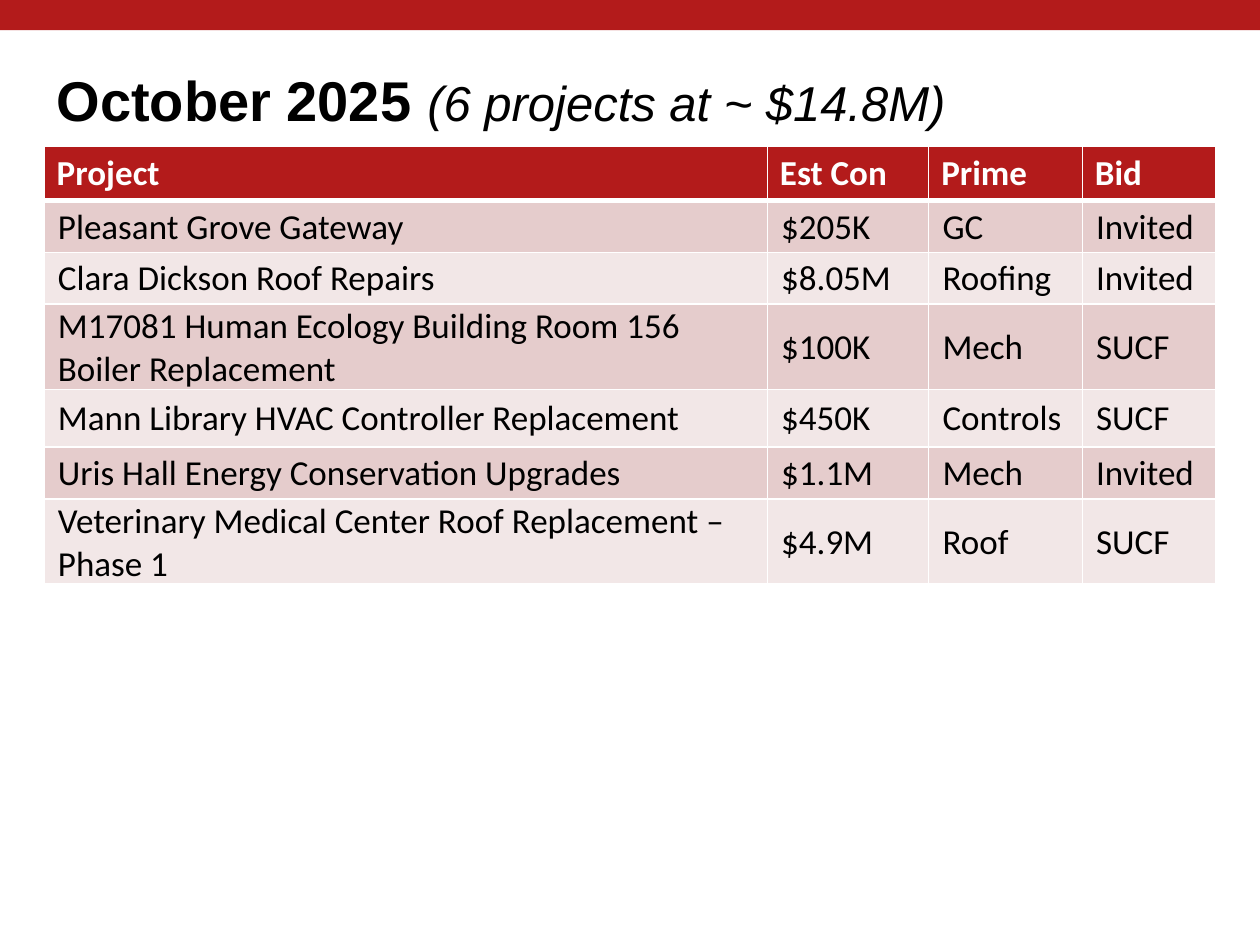
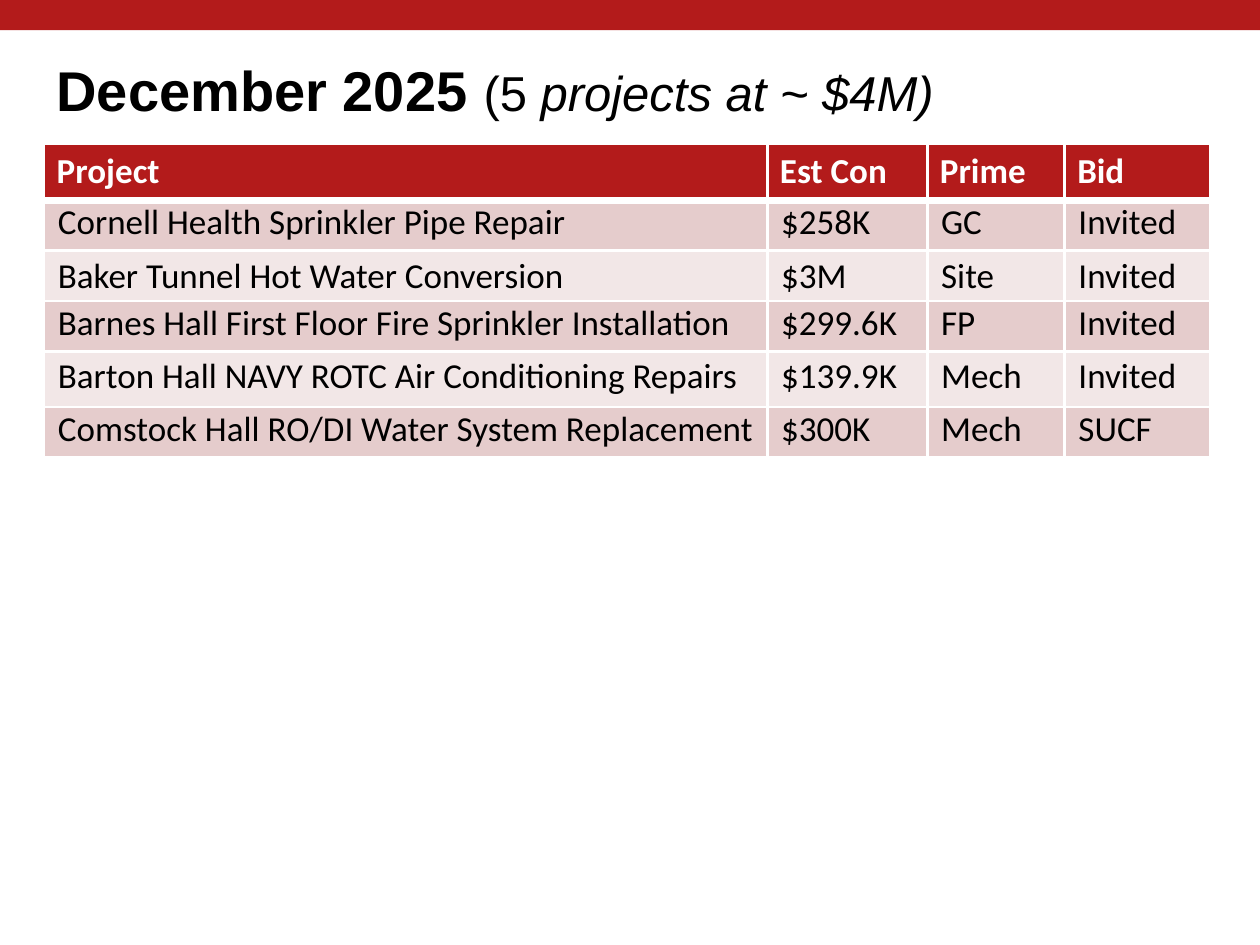
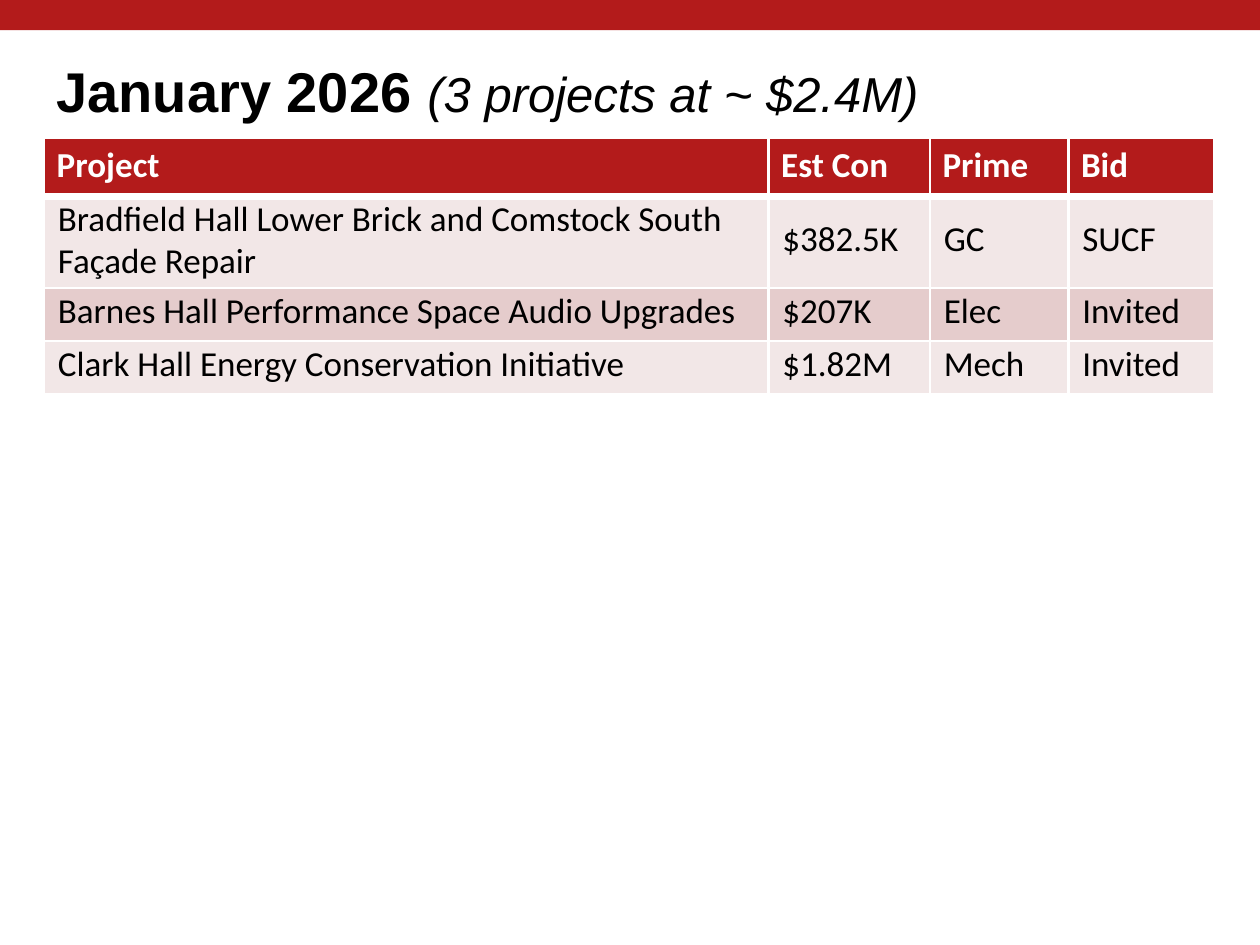
import lxml.etree
import pptx
import pptx.dml.color
import pptx.enum.shapes
import pptx.enum.text
import pptx.oxml.ns
import pptx.util

Pt = pptx.util.Pt
qn = pptx.oxml.ns.qn

COLORS = {
    "red": "B31B1B",
    "dark_stripe": "E5CCCC",
    "light_stripe": "F2E7E7",
    "white": "FFFFFF",
    "black": "000000",
}
STRIPES = ["dark_stripe", "light_stripe"]
HEADINGS = ["Project", "Est Con", "Prime", "Bid"]
PAGE_WIDTH, PAGE_HEIGHT = 720, 540
LEFT = 25.2
BAND_HEIGHT = 17.3
TITLE_HEIGHT = 54


def rgb(name):
    return pptx.dml.color.RGBColor.from_string(COLORS[name])


class BidDeck:
    """Holds the shared style and the page being drawn."""

    title_font = "Arial"
    table_font = "Calibri"

    def __init__(self):
        self.deck = pptx.Presentation()
        self.deck.slide_width = Pt(PAGE_WIDTH)
        self.deck.slide_height = Pt(PAGE_HEIGHT)
        self.page = None

    def add_page(self):
        self.page = self.deck.slides.add_slide(self.deck.slide_layouts[6])
        self.add_band()

    def add_band(self):
        band = self.page.shapes.add_shape(
            pptx.enum.shapes.MSO_SHAPE.RECTANGLE, 0, 0, Pt(PAGE_WIDTH), Pt(BAND_HEIGHT))
        band.shadow.inherit = False
        band.fill.solid()
        band.fill.fore_color.rgb = rgb("red")
        band.line.fill.background()

    def add_span(self, para, text, font, size, color, bold=False, italic=False):
        span = para.add_run()
        span.text = text
        span.font.name = font
        span.font.size = Pt(size)
        span.font.color.rgb = rgb(color)
        span.font.bold = bold
        span.font.italic = italic

    def add_title(self, top, month, summary):
        box = self.page.shapes.add_textbox(
            Pt(LEFT), Pt(top), Pt(PAGE_WIDTH - LEFT), Pt(TITLE_HEIGHT))
        frame = box.text_frame
        frame.word_wrap = True
        frame.vertical_anchor = pptx.enum.text.MSO_ANCHOR.MIDDLE
        para = frame.paragraphs[0]
        self.add_span(para, month + " ", self.title_font, 32, "black", bold=True)
        for text, italic in summary:
            self.add_span(para, text, self.title_font, 28, "black", italic=italic)

    def add_borders(self, cell, widths):
        properties = cell._tc.get_or_add_tcPr()
        for side, width in widths.items():
            line = lxml.etree.SubElement(properties, qn("a:ln" + side), w=str(Pt(width)))
            fill = lxml.etree.SubElement(line, qn("a:solidFill"))
            lxml.etree.SubElement(fill, qn("a:srgbClr"), val=COLORS["white"])

    def fill_cell(self, cell, text, fill, borders, header, bottom_inset):
        self.add_borders(cell, borders)
        cell.fill.solid()
        cell.fill.fore_color.rgb = rgb(fill)
        para = cell.text_frame.paragraphs[0]
        if not header:
            cell.vertical_anchor = pptx.enum.text.MSO_ANCHOR.MIDDLE
            cell.margin_left = cell.margin_top = cell.margin_right = Pt(0.72)
            cell.margin_bottom = Pt(bottom_inset)
            indent = para._p.get_or_add_pPr()
            indent.set("marL", str(Pt(7.2)))
            indent.set("indent", "0")
        self.add_span(para, text, self.table_font, 20,
                      "white" if header else "black", bold=header)

    def add_project_table(self, top, widths, header_height, projects, line, header_line,
                          first_stripe=0):
        """Each project is (row height, bottom inset, cell texts)."""
        rows = [(header_height, 0, HEADINGS)] + projects
        heights = [height for height, _, _ in rows]
        table = self.page.shapes.add_table(
            len(rows), len(widths), Pt(LEFT), Pt(top),
            Pt(sum(widths)), Pt(sum(heights))).table
        table.horz_banding = False
        for column, width in zip(table.columns, widths):
            column.width = Pt(width)
        for number, (height, inset, texts) in enumerate(rows):
            table.rows[number].height = Pt(height)
            header = number == 0
            fill = "red" if header else STRIPES[(number - 1 + first_stripe) % 2]
            borders = {"L": line, "R": line,
                       "T": header_line if number == 1 else line,
                       "B": header_line if header else line}
            for column, text in enumerate(texts):
                self.fill_cell(table.cell(number, column), text, fill, borders,
                               header, inset)


def main():
    bids = BidDeck()

    # October
    bids.add_page()
    bids.add_title(29.5, "October 2025", [("(6 projects at ~ $14.8M)", True)])
    bids.add_project_table(83.5, [413.3, 92.2, 87.8, 76.3], 29.5, [
        (29.5, 0, ["Pleasant Grove Gateway", "$205K", "GC", "Invited"]),
        (29.5, 0, ["Clara Dickson Roof Repairs", "$8.05M", "Roofing", "Invited"]),
        (29.5, 0, ["M17081 Human Ecology Building Room 156 Boiler Replacement",
                   "$100K", "Mech", "SUCF"]),
        (33.1, 0, ["Mann Library HVAC Controller Replacement",
                   "$450K", "Controls", "SUCF"]),
        (29.5, 0, ["Uris Hall Energy Conservation Upgrades", "$1.1M", "Mech", "Invited"]),
        (29.5, 0, ["Veterinary Medical Center Roof Replacement – Phase 1",
                   "$4.9M", "Roof", "SUCF"]),
    ], line=1, header_line=3)

    # December
    bids.add_page()
    bids.add_title(23.8, "December 2025", [("(5", False), (" projects at ~ $4M)", True)])
    bids.add_project_table(82.1, [413.3, 91.4, 78.5, 83.5], 32.4, [
        (28.8, 3.6, ["Cornell Health Sprinkler Pipe Repair", "$258K", "GC", "Invited"]),
        (28.8, 0, ["Baker Tunnel Hot Water Conversion", "$3M", "Site", "Invited"]),
        (28.8, 3.6, ["Barnes Hall First Floor Fire Sprinkler Installation",
                     "$299.6K", "FP", "Invited"]),
        (31.7, 3.6, ["Barton Hall NAVY ROTC Air Conditioning Repairs",
                     "$139.9K", "Mech", "Invited"]),
        (28.8, 3.6, ["Comstock Hall RO/DI Water System Replacement",
                     "$300K", "Mech", "SUCF"]),
    ], line=1.64, header_line=4.93)

    # January
    bids.add_page()
    bids.add_title(24.5, "January 2026", [("(3 projects at ~ $2.4M)", True)])
    bids.add_project_table(78.5, [414, 92.2, 79.2, 83.5], 33.8, [
        (32.4, 3.6, ["Bradfield Hall Lower Brick and Comstock South Façade Repair",
                     "$382.5K", "GC", "SUCF"]),
        (30.2, 3.6, ["Barnes Hall Performance Space Audio Upgrades",
                     "$207K", "Elec", "Invited"]),
        (30.2, 3.6, ["Clark Hall Energy Conservation Initiative",
                     "$1.82M", "Mech", "Invited"]),
    ], line=1.64, header_line=4.93, first_stripe=1)

    bids.deck.save("out.pptx")


if __name__ == "__main__":
    main()
